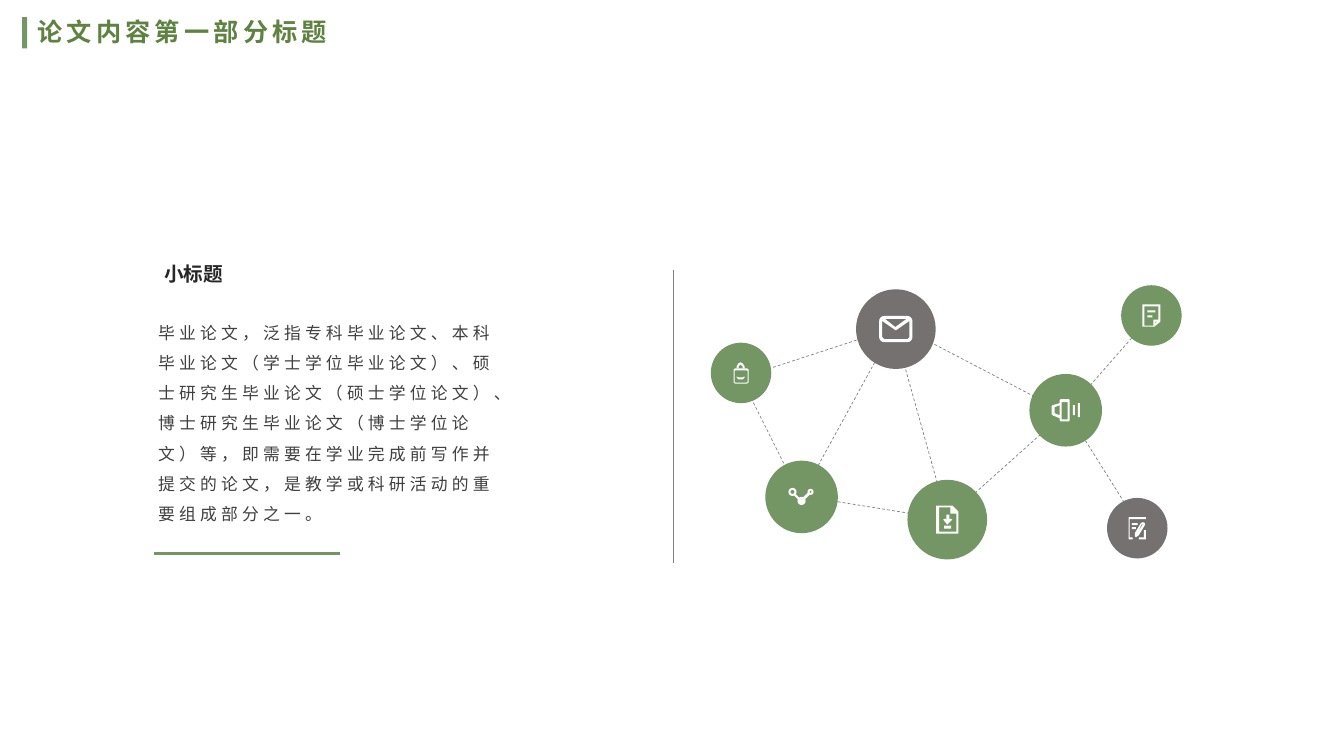
from math import cos, pi, sin

from pptx import Presentation
from pptx.dml.color import RGBColor
from pptx.enum.dml import MSO_LINE
from pptx.enum.shapes import MSO_CONNECTOR, MSO_SHAPE
from pptx.enum.text import MSO_ANCHOR, MSO_AUTO_SIZE, PP_ALIGN
from pptx.oxml.ns import qn
from pptx.util import Pt

PX = 9144  # 100 px to the inch
GREEN, GREY, WHITE, LINE = "739664", "767171", "FFFFFF", "808080"


def px(n):
    return round(n * PX)


def rgb(value):
    return RGBColor.from_string(value)


def fill(sp, color):
    sp.shadow.inherit = False
    sp.fill.solid()
    sp.fill.fore_color.rgb = rgb(color)
    sp.line.fill.background()


def add_preset(s, kind, x, y, w, h, color):
    fill(s.shapes.add_shape(kind, px(x), px(y), px(w), px(h)), color)


def add_line(s, x1, y1, x2, y2, color=LINE, width=0.5, dash=None):
    ln = s.shapes.add_connector(MSO_CONNECTOR.STRAIGHT, px(x1), px(y1), px(x2), px(y2))
    ln.line.color.rgb = rgb(color)
    ln.line.width = Pt(width)
    if dash:
        ln.line.dash_style = dash
    spPr = ln._element.spPr
    spPr.append(spPr.makeelement(qn("a:effectLst"), {}))


def set_text(sp, text, font, size, color, bold=False, spacing=0, wrap=True):
    tf = sp.text_frame
    tf.word_wrap = wrap
    tf.auto_size = MSO_AUTO_SIZE.NONE
    tf.vertical_anchor = MSO_ANCHOR.TOP
    p = tf.paragraphs[0]
    p.text = text
    p.alignment = PP_ALIGN.LEFT
    p.font.name, p.font.size, p.font.bold = font, Pt(size), bold
    p.font.color.rgb = rgb(color)
    if spacing:
        p._p.pPr.find(qn("a:defRPr")).set("spc", str(spacing * 100))
    return p


def add_text(s, x, y, w, h, *args, **kwargs):
    sp = s.shapes.add_textbox(px(x), px(y), px(w), px(h))
    return set_text(sp, *args, **kwargs)


# Icon outlines, in px from the icon's top left corner
def rounded(x, y, w, h, r):
    corners = [(x + w - r, y + h - r), (x + r, y + h - r), (x + r, y + r), (x + w - r, y + r)]
    return [(cx + r * cos((q + k / 4) * pi / 2), cy + r * sin((q + k / 4) * pi / 2))
            for q, (cx, cy) in enumerate(corners) for k in range(5)]


def disc(cx, cy, r):
    return rounded(cx - r, cy - r, 2 * r, 2 * r, r)


# Each icon: width, height, parts; a tuple is a bar, a list is a set of contours
MAIL = (33, 26, [
    [rounded(0, 0, 33, 26, 5), [(6, 3), (27, 3), (16, 11)],
     [(3, 5), (16, 14), (17, 14), (30, 5), (30, 21), (28, 23), (5, 23), (3, 21)]]])
DOWNLOAD = (22, 28, [
    [[(0, 0), (16, 0), (22, 6), (22, 28), (0, 28)],
     [(3, 2), (14, 2), (14, 8), (20, 8), (20, 26), (3, 26)]],
    [[(10, 9), (13, 9), (13, 14), (14, 13), (16, 14), (11, 19), (7, 14), (9, 13), (10, 14)]],
    (8, 20, 7, 3)])
EDIT = (17, 22, [
    [[(0, 0), (17, 0), (17, 2), (1, 2), (1, 20), (4, 20), (4, 22), (0, 22)]],
    [[(15, 13), (17, 13), (17, 22), (10, 22), (10, 20), (15, 20)]],
    [[(12, 6), (14, 5), (16, 6), (16, 8), (10, 18), (7, 20), (6, 19), (6, 16)],
     [(13, 7), (14, 7), (8, 17)]],
    (3, 6, 6, 2), (3, 10, 4, 2)])
SHARE = (26, 18, [
    [disc(4, 4, 4), disc(4, 4, 2)],
    [disc(22, 4, 3), disc(22, 4, 1)],
    [disc(13, 13, 4)],
    [[(5, 7), (7, 6), (12, 11), (10, 12)]],
    [[(19, 5), (21, 7), (16, 12), (14, 10)]]])
SPEAKER = (28, 22, [
    [[(9, 0), (17, 0), (18, 1), (18, 21), (17, 22), (9, 22), (8, 21), (8, 19),
      (1, 16), (0, 15), (0, 7), (1, 6), (8, 4), (8, 1)],
     [(3, 8), (8, 6), (8, 16), (3, 14)],
     [(10, 3), (16, 3), (16, 20), (10, 20)]],
    (21, 6, 2, 10), (26, 4, 2, 14)])
NOTE = (18, 22, [
    [[(0, 0), (0, 22), (12, 22), (18, 17), (18, 0)],
     [(2, 2), (16, 2), (16, 15), (11, 15), (11, 21), (2, 21)],
     [(15, 17), (13, 19), (13, 17)]],
    (5, 6, 8, 2), (5, 11, 5, 2)])
BAG = (15, 21, [
    [rounded(0, 6, 15, 15, 2), rounded(1, 8, 13, 12, 1)],
    [[(3, 6), (3, 4), (5, 1), (7, 0), (9, 1), (11, 4), (11, 6),
      (9, 6), (9, 4), (7, 2), (5, 4), (5, 6)]],
    [[(3, 14), (5, 15), (9, 15), (11, 14), (11, 15), (9, 17), (5, 17), (3, 15)]]])

# Nodes: left, top, diameter, colour, icon
NODES = [
    (144, 4, 79, GREY, MAIL), (195, 193, 79, GREEN, DOWNLOAD), (393, 211, 60, GREY, EDIT),
    (54, 174, 72, GREEN, SHARE), (316, 88, 72, GREEN, SPEAKER), (407, 0, 60, GREEN, NOTE),
    (0, 57, 60, GREEN, BAG)]
LINKS = [
    (57, 83, 152, 52), (165, 72, 102, 187), (121, 214, 202, 227), (226, 201, 190, 72),
    (213, 54, 324, 112), (373, 103, 423, 46), (327, 148, 261, 207), (369, 150, 411, 217),
    (40, 112, 76, 184)]


def add_icon(s, cx, cy, icon):
    w, h, parts = icon
    x, y = cx - w / 2, cy - h / 2
    for part in parts:
        if isinstance(part, tuple):
            bx, by, bw, bh = part
            add_preset(s, MSO_SHAPE.RECTANGLE, x + bx, y + by, bw, bh, WHITE)
            continue
        contours = [[(px(x + a), px(y + b)) for a, b in c] for c in part]
        fb = s.shapes.build_freeform(*contours[0][0])
        for i, points in enumerate(contours):
            if i:
                fb.move_to(*points[0])
            fb.add_line_segments(points[1:], close=True)
        fill(fb.convert_to_shape(), WHITE)


def add_network(s, x, y):
    for x1, y1, x2, y2 in LINKS:
        add_line(s, x + x1, y + y1, x + x2, y + y2, dash=MSO_LINE.DASH)
    for nx, ny, d, color, icon in NODES:
        add_preset(s, MSO_SHAPE.OVAL, x + nx, y + ny, d, d, color)
        add_icon(s, x + nx + d / 2, y + ny + d / 2, icon)


def add_divider(s, x, y):
    add_line(s, x, y + 71, x, y + 291)
    add_line(s, x, y, x, y + 86)


def add_body(s, x, y):
    p = add_text(s, x, y + 50, 369, 222,
                 "毕业论文，泛指专科毕业论文、本科毕业论文（学士学位毕业论文）、硕士研究生毕业论文"
                 "（硕士学位论文）、博士研究生毕业论文（博士学位论文）等，即需要在学业完成前写作并"
                 "提交的论文，是教学或科研活动的重要组成部分之一。",
                 "Arial", 12, "404040", spacing=3)
    p.line_spacing = 1.5
    add_text(s, x + 6, y, 79, 34, "小标题", "Arial", 14, "262626", bold=True, wrap=False)
    add_line(s, x + 6, y + 294, x + 190, y + 294, GREEN, 2.25)


def add_heading(s, x, y):
    sp = s.shapes.title
    sp.left, sp.top, sp.width, sp.height = px(x + 5), px(y - 6), px(313), px(40)
    set_text(sp, "论文内容第一部分标题", "Calibri", 18, "5E8240", bold=True, spacing=3)
    add_preset(s, MSO_SHAPE.RECTANGLE, x, y, 5, 31, GREEN)


def main():
    prs = Presentation()
    prs.slide_width, prs.slide_height = px(1333), px(750)
    s = prs.slides.add_slide(prs.slide_layouts[5])
    add_network(s, 705, 283)
    add_divider(s, 668, 268)
    add_body(s, 147, 255)
    add_heading(s, 22, 17)
    prs.save("out.pptx")


if __name__ == "__main__":
    main()
